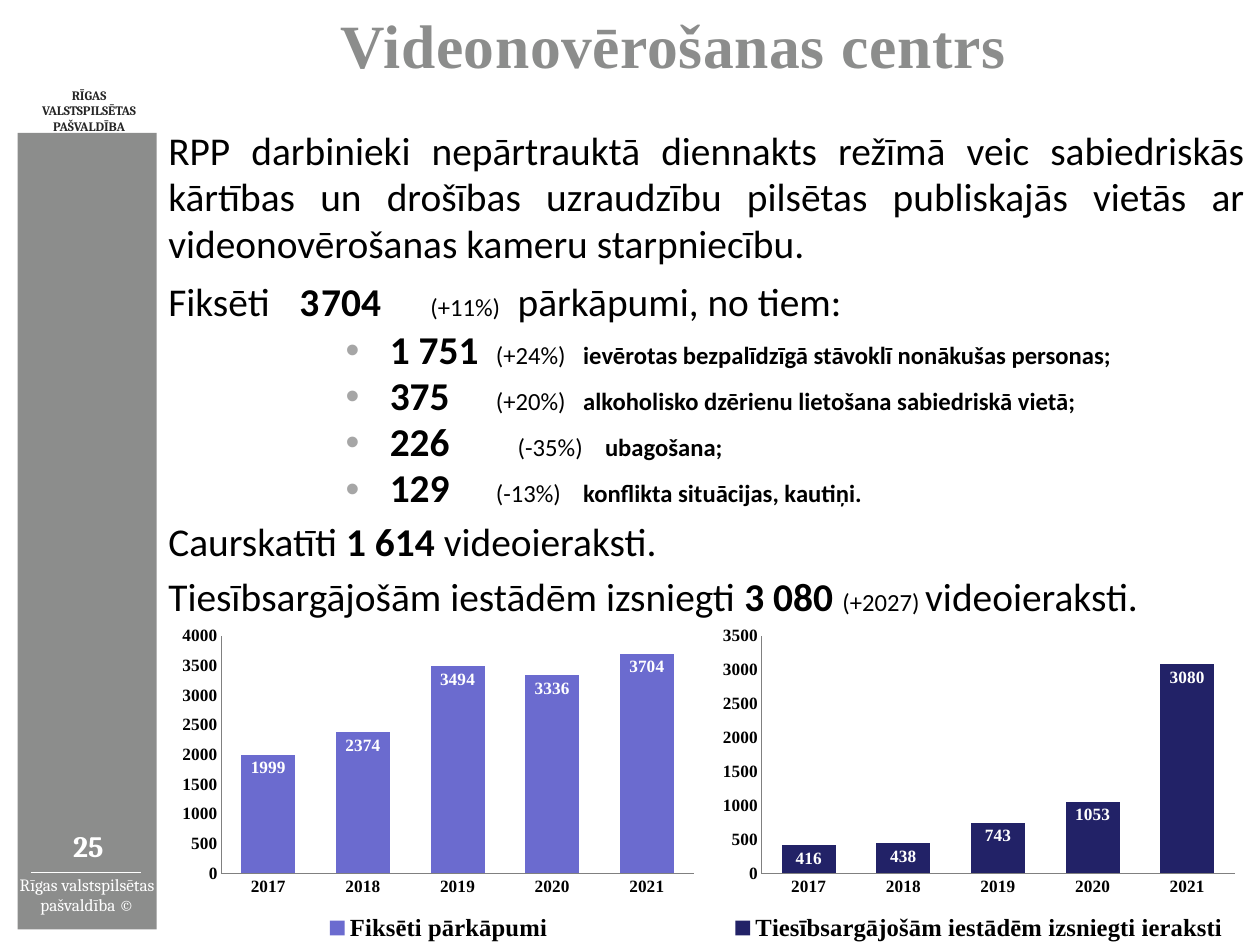
from lxml import etree
from pptx import Presentation, util as u
from pptx.chart import data as chart_data
from pptx.dml.color import RGBColor
from pptx.enum import chart as kinds, shapes, text
from pptx.oxml import ns

Pt = u.Pt
COLOURS = {"gray": "8C8D8C", "white": "FFFFFF", "black": "000000", "ink": "262626",
           "bullet": "A6A6A6", "axis": "808080", "violet": "6B6BCF", "navy": "222267"}
SERIF, HEADING, BODY = "Cambria", "Times New Roman", "Calibri"
TAB_STEP = 17.75
YEARS = ["2017", "2018", "2019", "2020", "2021"]

# Each paragraph: bulleted or not, then spans of (words, size, bold)
PARAGRAPHS = [
    (False, [("RPP darbinieki nepārtrauktā diennakts režīmā veic sabiedriskās kārtības un "
              "drošības uzraudzību pilsētas publiskajās vietās ar videonovērošanas kameru "
              "starpniecību.", 32, False)]),
    (False, [("Fiksēti \t", 32, False), ("3\t704 ", 32, True), ("\t\t(+11%) ", 20, False),
             ("\t", 36, False), ("pārkāpumi, no tiem:", 32, False)]),
    (True, [("1 751 \t", 32, True), ("(+24%)\t", 20, False),
            ("ievērotas bezpalīdzīgā stāvoklī nonākušas personas;", 20, True)]),
    (True, [("375\t\t\t", 32, True), ("(+20%)\t", 20, False),
            ("alkoholisko dzērienu lietošana sabiedriskā vietā;", 20, True)]),
    (True, [("226", 32, True), (" \t\t\t", 20, True), ("(-35%)\t\t", 20, False),
            ("ubagošana;", 20, True)]),
    (True, [("129\t\t \t", 32, True), ("(-13%)\t\t", 20, False),
            ("konflikta situācijas, kautiņi.", 20, True)]),
    (False, [("Caurskatīti ", 32, False), ("1 614 ", 32, True),
             ("videoieraksti.", 32, False)]),
    (False, [("Tiesībsargājošām iestādēm izsniegti ", 32, False), ("3 080", 32, True),
             (" ", 33, True), ("(+2027) ", 20, False), ("videoieraksti.", 32, False)]),
]


def rgb(name):
    return RGBColor.from_string(COLOURS[name])


def assign(target, **values):
    for name, value in values.items():
        setattr(target, name, value)


def style(font, face, size, colour, bold=False):
    assign(font, name=face, size=Pt(size), bold=bold)
    font.color.rgb = rgb(colour)


def add_bar(page, box, colour):
    bar = page.shapes.add_shape(shapes.MSO_SHAPE.RECTANGLE, *map(Pt, box))
    bar.shadow.inherit = False
    bar.fill.solid()
    bar.fill.fore_color.rgb = rgb(colour)
    bar.line.fill.background()


def add_text_box(page, box, inset):
    frame = page.shapes.add_textbox(*map(Pt, box)).text_frame
    assign(frame, word_wrap=True, vertical_anchor=text.MSO_ANCHOR.MIDDLE,
           **{f"margin_{side}": Pt(inset) for side in ("left", "top", "right", "bottom")})
    return frame


def add_label(page, box, words, inset=0, **look):
    para = add_text_box(page, box, inset).paragraphs[0]
    para.alignment = text.PP_ALIGN.CENTER
    span = para.add_run()
    span.text = words
    style(span.font, **look)
    return span


def draw_sidebar(page, box):
    left, top, width, height = box
    bottom = top + height
    add_bar(page, box, "gray")

    # Municipality name above the bar
    add_label(page, (left - 1.4, top - 41, 118.8, 45.4), "RĪGAS VALSTSPILSĒTAS PAŠVALDĪBA",
              inset=7.2, face=SERIF, size=10.5, colour="ink", bold=True)

    # Page number, rule and copyright line
    add_label(page, (left + 1, bottom - 86.4, width, 36.7), "25",
              face=SERIF, size=24, colour="white", bold=True)
    rule_y = Pt(bottom - 46)
    rule = page.shapes.add_connector(shapes.MSO_CONNECTOR.STRAIGHT, Pt(left + 10.8), rule_y,
                                     Pt(left + 100), rule_y)
    rule.line.color.rgb = rgb("white")
    rule.line.width = Pt(1)
    etree.SubElement(rule._element.spPr, ns.qn("a:effectLst"))
    add_label(page, (left, bottom - 44, width, 31.7), "Rīgas valstspilsētas pašvaldība ©",
              face=SERIF, size=14, colour="white")


def draw_title(page, box):
    span = add_label(page, box, "Videonovērošanas centrs", inset=4.3,
                     face=HEADING, size=50, colour="gray", bold=True)
    span.font._element.set("spc", "50")


def add_bullet(para):
    props = para._p.get_or_add_pPr()
    props.set("marL", str(Pt(180)))
    props.set("indent", str(Pt(-36)))
    colour = etree.SubElement(props, ns.qn("a:buClr"))
    etree.SubElement(colour, ns.qn("a:srgbClr"), val=COLOURS["bullet"])
    etree.SubElement(props, ns.qn("a:buFont"), typeface="Arial")
    etree.SubElement(props, ns.qn("a:buChar"), char="•")


def draw_body(page, box):
    frame = add_text_box(page, box, 4.3)
    for index, (bulleted, spans) in enumerate(PARAGRAPHS):
        para = frame.add_paragraph() if index else frame.paragraphs[0]
        if bulleted:
            add_bullet(para)
        para._p.get_or_add_pPr().set("defTabSz", str(Pt(TAB_STEP)))
        assign(para, alignment=text.PP_ALIGN.JUSTIFY, line_spacing=0.98,
               space_before=Pt(6 if index and not bulleted else 0))
        for words, size, bold in spans:
            span = para.add_run()
            span.text = words
            style(span.font, BODY, size, "black", bold)


def set_plot_layout(chart, **place):
    area = chart._chartSpace.chart.plotArea
    for old in area.findall(ns.qn("c:layout")):
        area.remove(old)
    layout = etree.Element(ns.qn("c:layout"))
    area.insert(0, layout)
    manual = etree.SubElement(layout, ns.qn("c:manualLayout"))
    settings = {"layoutTarget": "inner", "xMode": "edge", "yMode": "edge", **place}
    for name, value in settings.items():
        etree.SubElement(manual, ns.qn(f"c:{name}"), val=str(value))


def draw_chart(page, box, name, values, colour, top_value):
    figures = chart_data.CategoryChartData()
    figures.categories = YEARS
    figures.add_series(name, values)
    chart = page.shapes.add_chart(kinds.XL_CHART_TYPE.COLUMN_CLUSTERED,
                                  *map(Pt, box), figures).chart
    chart.has_title = False
    style(chart.font, SERIF, 18, "black")
    set_plot_layout(chart, x=0.1, y=0.03, w=0.87, h=0.74)

    # Axes
    for axis in (chart.category_axis, chart.value_axis):
        assign(axis, has_major_gridlines=False, major_tick_mark=kinds.XL_TICK_MARK.NONE,
               minor_tick_mark=kinds.XL_TICK_MARK.NONE)
        style(axis.tick_labels.font, HEADING, 14, "black", True)
        axis.format.line.color.rgb = rgb("axis")
        axis.format.line.width = Pt(0.75)
    assign(chart.value_axis, minimum_scale=0, maximum_scale=top_value, major_unit=500)

    # Legend
    chart.has_legend = True
    assign(chart.legend, position=kinds.XL_LEGEND_POSITION.BOTTOM, include_in_layout=False)
    style(chart.legend.font, HEADING, 20, "black", True)

    # Columns and their values
    plot = chart.plots[0]
    assign(plot, gap_width=75, vary_by_categories=False, has_data_labels=True)
    assign(plot.data_labels, show_value=True, position=kinds.XL_LABEL_POSITION.INSIDE_END)
    style(plot.data_labels.font, HEADING, 14, "white", True)
    fill = plot.series[0].format.fill
    fill.solid()
    fill.fore_color.rgb = rgb(colour)


def main():
    deck = Presentation()
    assign(deck, slide_width=Pt(1024), slide_height=Pt(768))
    page = deck.slides.add_slide(deck.slide_layouts[6])
    draw_sidebar(page, (14.4, 108, 113, 647.3))
    draw_chart(page, (574.6, 509, 442, 260.6), "Tiesībsargājošām iestādēm izsniegti ieraksti",
               [416, 438, 743, 1053, 3080], "navy", 3500)
    draw_chart(page, (135.4, 509, 442, 260.6), "Fiksēti pārkāpumi",
               [1999, 2374, 3494, 3336, 3704], "violet", 4000)
    draw_title(page, (70.6, -1.4, 953.4, 73.4))
    draw_body(page, (132.5, 89.3, 884.2, 430.6))
    deck.save("out.pptx")


if __name__ == "__main__":
    main()
